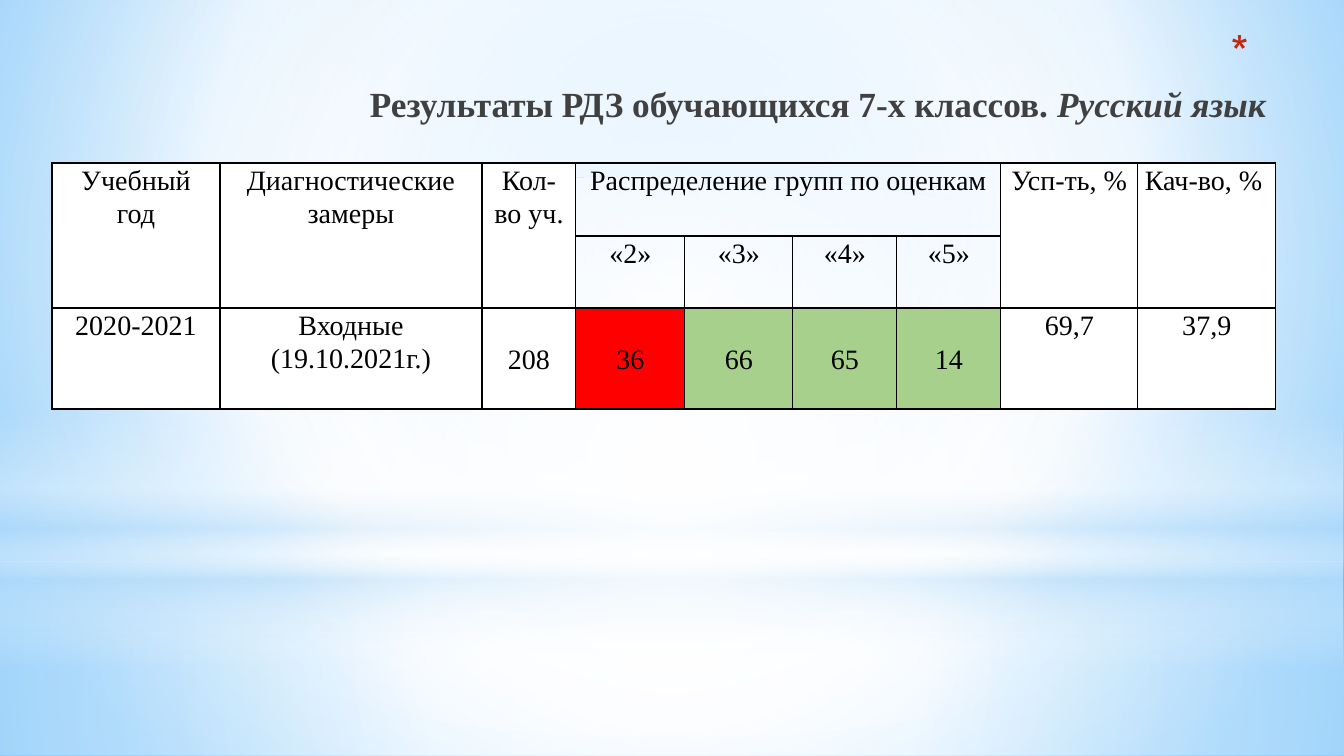
import pptx
import pptx.util
import pptx.dml.color
import pptx.enum.shapes
import pptx.enum.text
import pptx.oxml
import pptx.oxml.ns

EMU_PER_PX = 9071.43
SLIDE_SIZE = (1344, 756)
FONT = "Times New Roman"
COLORS = {
    "white": "FFFFFF", "black": "000000", "title": "404040", "bullet": "C3260C",
    "mist": "B4DCFA", "sky": "9ED5FF", "azure": "5BB9FF",
    "fail": "FF0000", "pass": "A8D08D",
}

TITLE = [("Результаты РДЗ обучающихся 7-х классов. ", False), ("Русский язык", True)]
TITLE_BOX = (179, 29, 1097, 64)

TABLE_ORIGIN = (52, 163)
COLUMN_WIDTHS = (168, 262, 94, 109, 108, 104, 104, 137, 138)
ROW_HEIGHTS = (73, 72, 101)
ROWS = [
    ["Учебный год", "Диагностические замеры", "Кол-во уч.",
     "Распределение групп по оценкам", "", "", "", "Усп-ть, %", "Кач-во, %"],
    ["", "", "", "«2»", "«3»", "«4»", "«5»", "", ""],
    ["2020-2021", "Входные (19.10.2021г.)", "208", "36", "66", "65", "14", "69,7", "37,9"],
]
GRADE_COLUMNS = range(3, 7)
CENTERED_COLUMNS = range(2, 7)
LEFT_ALIGNED = "Кач-во, %"

# Gradient stops: (position %, colour, opacity %)
BACKDROP = [(0, "sky", 100), (60, "white", 100), (100, "azure", 100)]
BACKDROP_FOCUS = (20, 10, 20, 60)
CENTER_FOCUS = (50, 50, 50, 50)
LIGHTS = [  # box, preset, stops, focus (None: vertical gradient)
    ((0, 562, 1344, 194), "RECTANGLE",
     [(0, "white", 91), (37, "white", 76), (100, "mist", 79)], CENTER_FOCUS),
    ((0, 0, 1344, 562), "RECTANGLE",
     [(0, "white", 89), (48, "white", 62), (100, "mist", 79)], CENTER_FOCUS),
    ((0, 415, 1344, 252), "RECTANGLE",
     [(0, "white", 0), (29, "white", 30), (45, "mist", 40), (55, "white", 26),
      (65, "mist", 60), (100, "white", 0)], None),
    ((0, 176, 1344, 562), "OVAL", [(0, "white", 100), (56, "white", 0)], CENTER_FOCUS),
]


def px(length):
    return pptx.util.Emu(round(length * EMU_PER_PX))


def rgb(name):
    return pptx.dml.color.RGBColor.from_string(COLORS[name])


def element(tag, content="", attributes=""):
    return pptx.oxml.parse_xml(
        f'<a:{tag} {pptx.oxml.ns.nsdecls("a")} {attributes}>{content}</a:{tag}>')


def paint_gradient(fill, owner, stops, focus):
    """Put a gradient in place of the first solid fill inside owner."""
    fill.solid()
    stop_list = "".join(
        f'<a:gs pos="{position * 1000}"><a:srgbClr val="{COLORS[color]}">'
        f'<a:alpha val="{opacity * 1000}"/></a:srgbClr></a:gs>'
        for position, color, opacity in stops)
    if focus:
        sides = " ".join(f'{side}="{share * 1000}"' for side, share in zip("ltrb", focus))
        direction = f'<a:path path="circle"><a:fillToRect {sides}/></a:path>'
    else:
        direction = '<a:lin ang="5400000" scaled="0"/>'
    solid = owner.find(".//" + pptx.oxml.ns.qn("a:solidFill"))
    solid.getparent().replace(
        solid, element("gradFill", f"<a:gsLst>{stop_list}</a:gsLst>{direction}"))


def style_paragraph(paragraph, size, color, align):
    paragraph.line_spacing = 1.07
    paragraph.alignment = align
    paragraph.font.name = FONT
    paragraph.font.size = pptx.util.Pt(size)
    paragraph.font.color.rgb = rgb(color)


def add_lights(slide):
    paint_gradient(slide.background.fill, slide._element, BACKDROP, BACKDROP_FOCUS)
    for box, preset, stops, focus in LIGHTS:
        light = slide.shapes.add_shape(
            getattr(pptx.enum.shapes.MSO_SHAPE, preset), *map(px, box))
        light.shadow.inherit = False
        light.line.fill.background()
        paint_gradient(light.fill, light._element, stops, focus)


def add_title(slide):
    title = slide.shapes.title
    slide.shapes._spTree.append(title._element)  # in front of the lights
    title.left, title.top, title.width, title.height = map(px, TITLE_BOX)
    frame = title.text_frame
    frame.auto_size = pptx.enum.text.MSO_AUTO_SIZE.NONE
    frame.vertical_anchor = pptx.enum.text.MSO_ANCHOR.TOP
    heading = frame.paragraphs[0]
    properties = heading._p.get_or_add_pPr()
    properties.set("marL", str(px(35)))
    properties.set("indent", str(-px(35)))
    properties.append(element("buClr", f'<a:srgbClr val="{COLORS["bullet"]}"/>'))
    properties.append(element("buSzPct", attributes='val="128000"'))
    properties.append(element("buChar", attributes='char="*"'))
    style_paragraph(heading, 25.2, "title", pptx.enum.text.PP_ALIGN.RIGHT)
    heading.font.bold = True
    heading.add_line_break()
    for words, italic in TITLE:
        run = heading.add_run()
        run.text = words
        run.font.italic = italic


def cell_color(row, column):
    if column not in GRADE_COLUMNS:
        return "white"
    if row < 2:
        return None
    return "fail" if column == GRADE_COLUMNS[0] else "pass"


def format_cell(cell, text, row, column):
    cell.margin_left = cell.margin_right = px(7)
    cell.margin_top = cell.margin_bottom = 0
    if row == 2 and column in CENTERED_COLUMNS:
        cell.vertical_anchor = pptx.enum.text.MSO_ANCHOR.MIDDLE
    color = cell_color(row, column)
    if color:
        cell.fill.solid()
        cell.fill.fore_color.rgb = rgb(color)
    else:
        cell.fill.background()
    border = f'<a:solidFill><a:srgbClr val="{COLORS["black"]}"/></a:solidFill>'
    for place, side in enumerate("LRTB"):
        cell._tc.get_or_add_tcPr().insert(place, element("ln" + side, border, 'w="12700"'))
    if text:
        cell.text = text
    align = pptx.enum.text.PP_ALIGN
    style_paragraph(cell.text_frame.paragraphs[0], 20, "black",
                    align.LEFT if text == LEFT_ALIGNED else align.CENTER)


def add_results(slide):
    size = (sum(COLUMN_WIDTHS), sum(ROW_HEIGHTS))
    results = slide.shapes.add_table(
        len(ROWS), len(COLUMN_WIDTHS), *map(px, TABLE_ORIGIN + size)).table
    results.first_row = results.horz_banding = False
    for column, width in zip(results.columns, COLUMN_WIDTHS):
        column.width = px(width)
    for row, height in zip(results.rows, ROW_HEIGHTS):
        row.height = px(height)
    for row, texts in enumerate(ROWS):
        for column, text in enumerate(texts):
            format_cell(results.cell(row, column), text, row, column)
    results.cell(0, GRADE_COLUMNS[0]).merge(results.cell(0, GRADE_COLUMNS[-1]))
    for column in range(len(COLUMN_WIDTHS)):
        if column not in GRADE_COLUMNS:
            results.cell(0, column).merge(results.cell(1, column))


def main():
    deck = pptx.Presentation()
    deck.slide_width, deck.slide_height = map(px, SLIDE_SIZE)
    slide = deck.slides.add_slide(deck.slide_layouts[5])
    add_lights(slide)
    add_title(slide)
    add_results(slide)
    deck.save("out.pptx")


if __name__ == "__main__":
    main()
